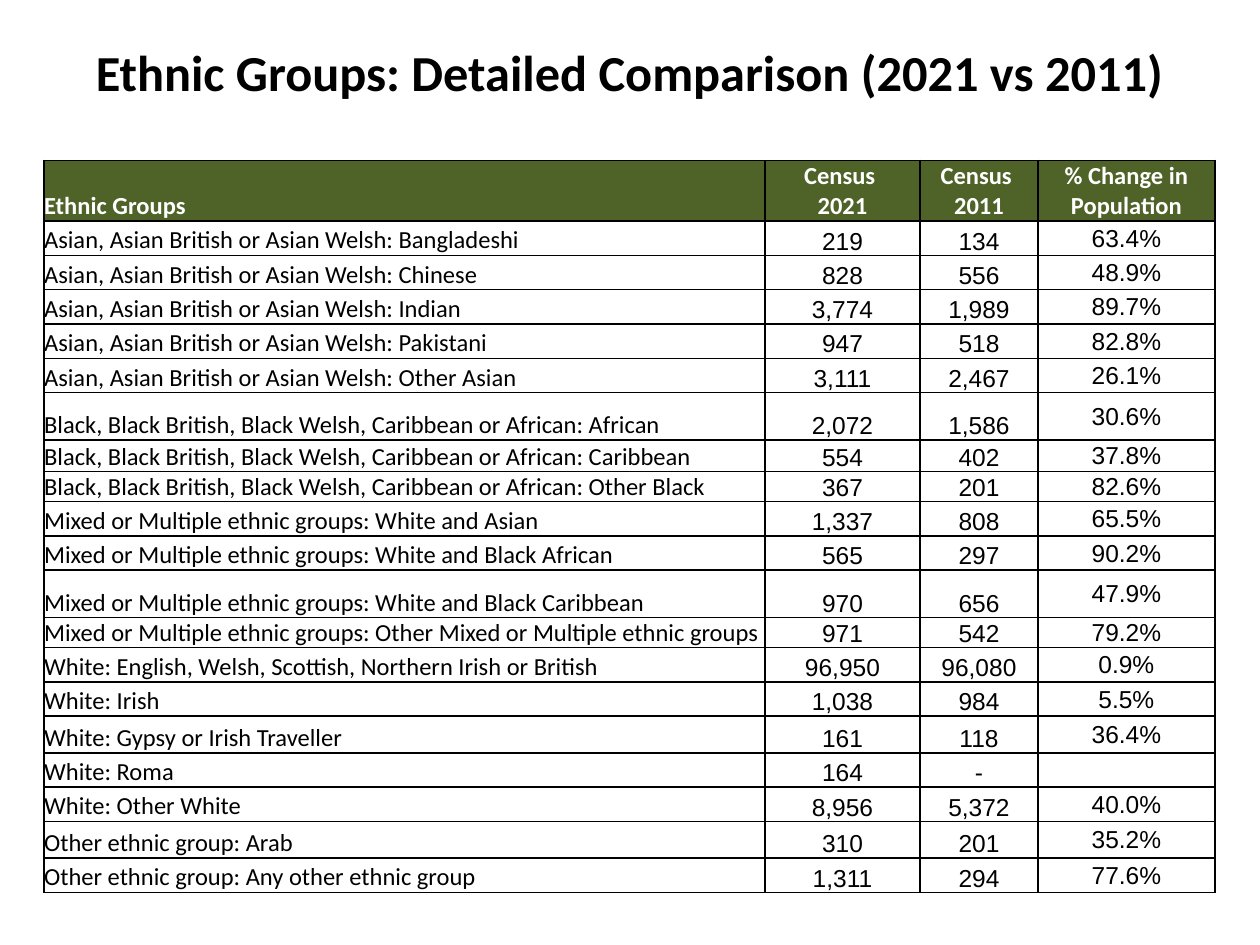
from dataclasses import dataclass

from lxml.etree import SubElement
from pptx import Presentation
from pptx.dml.color import RGBColor
from pptx.enum.text import MSO_ANCHOR as Anchor, PP_ALIGN as Align
from pptx.oxml.ns import qn
from pptx.util import Pt

BLACK, WHITE, GREEN = "000000", "FFFFFF", "4F6228"
COLUMN_WIDTHS = (412, 88.5, 67.5, 101)
HEADER_HEIGHT = 34.8
COMPACT, SNUG, NORMAL, LOOSE, TALL = 17.1, 18, 19.6, 21, 27.2  # row heights
HEADINGS = ("Ethnic Groups", "Census \n2021", "Census \n2011",
            "% Change in Population")


@dataclass(frozen=True)
class CellStyle:
    font: str = "Arial"
    color: str = BLACK
    fill: str = ""
    bold: bool = False
    align: Align = Align.CENTER
    anchor: Anchor = Anchor.BOTTOM
    inset: float = 0.7


@dataclass(frozen=True)
class GroupRow:
    group: str
    census_2021: str
    census_2011: str
    change: str
    height: float = NORMAL

    def texts(self) -> tuple[str, ...]:
        return self.group, self.census_2021, self.census_2011, self.change


ASIAN = "Asian, Asian British or Asian Welsh: "
BLACK_GROUP = "Black, Black British, Black Welsh, Caribbean or African: "
MIXED = "Mixed or Multiple ethnic groups: "
OTHER = "Other ethnic group: "

GROUPS = (
    GroupRow(ASIAN + "Bangladeshi", "219", "134", "63.4%"),
    GroupRow(ASIAN + "Chinese", "828", "556", "48.9%"),
    GroupRow(ASIAN + "Indian", "3,774", "1,989", "89.7%"),
    GroupRow(ASIAN + "Pakistani", "947", "518", "82.8%"),
    GroupRow(ASIAN + "Other Asian", "3,111", "2,467", "26.1%"),
    GroupRow(BLACK_GROUP + "African", "2,072", "1,586", "30.6%", TALL),
    GroupRow(BLACK_GROUP + "Caribbean", "554", "402", "37.8%", SNUG),
    GroupRow(BLACK_GROUP + "Other Black", "367", "201", "82.6%", COMPACT),
    GroupRow(MIXED + "White and Asian", "1,337", "808", "65.5%"),
    GroupRow(MIXED + "White and Black African", "565", "297", "90.2%"),
    GroupRow(MIXED + "White and Black Caribbean", "970", "656", "47.9%", TALL),
    GroupRow(MIXED + "Other Mixed or Multiple ethnic groups",
             "971", "542", "79.2%", COMPACT),
    GroupRow("White: English, Welsh, Scottish, Northern Irish or British",
             "96,950", "96,080", "0.9%"),
    GroupRow("White: Irish", "1,038", "984", "5.5%"),
    GroupRow("White: Gypsy or Irish Traveller", "161", "118", "36.4%", LOOSE),
    GroupRow("White: Roma", "164", "-", ""),
    GroupRow("White: Other White", "8,956", "5,372", "40.0%"),
    GroupRow(OTHER + "Arab", "310", "201", "35.2%", LOOSE),
    GroupRow(OTHER + "Any other ethnic group", "1,311", "294", "77.6%"),
)

HEADER_STYLES = tuple(
    CellStyle("Calibri", WHITE, GREEN, True, align, anchor, 0)
    for align, anchor in ((Align.LEFT, Anchor.BOTTOM),
                          (Align.CENTER, Anchor.BOTTOM),
                          (Align.CENTER, Anchor.MIDDLE),
                          (Align.CENTER, Anchor.BOTTOM)))
BODY_STYLES = (CellStyle("Calibri", align=Align.LEFT, inset=0), CellStyle(),
               CellStyle(), CellStyle(anchor=Anchor.MIDDLE))


def rgb(color: str) -> RGBColor:
    return RGBColor.from_string(color)


def set_font(para, name: str, size: float, color: str, bold: bool) -> None:
    font = para.font
    font.name, font.size, font.bold = name, Pt(size), bold
    font.color.rgb = rgb(color)


def add_borders(cell) -> None:
    properties = cell._tc.get_or_add_tcPr()
    for side in ("lnL", "lnR", "lnT", "lnB"):
        line = SubElement(properties, qn(f"a:{side}"), w=str(Pt(1)))
        fill = SubElement(line, qn("a:solidFill"))
        SubElement(fill, qn("a:srgbClr"), val=BLACK)


def fill_cell(cell, text: str, style: CellStyle) -> None:
    add_borders(cell)
    if style.fill:
        cell.fill.solid()
        cell.fill.fore_color.rgb = rgb(style.fill)
    else:
        cell.fill.background()
    cell.margin_left = cell.margin_right = cell.margin_top = Pt(style.inset)
    cell.margin_bottom = 0
    cell.vertical_anchor = style.anchor
    para = cell.text_frame.paragraphs[0]
    para.text = text
    para.alignment = style.align
    set_font(para, style.font, 14, style.color, style.bold)
    if not text:  # an empty cell takes its line height from the end mark
        SubElement(para._p, qn("a:endParaRPr"), sz="1400")


def add_title(page, text: str) -> None:
    title = page.shapes.title
    title.left, title.top, title.width, title.height = (
        Pt(36), Pt(21.6), Pt(648), Pt(38.2))
    frame = title.text_frame
    frame.word_wrap = True
    frame.vertical_anchor = Anchor.MIDDLE
    para = frame.paragraphs[0]
    para.text = text
    para.alignment = Align.CENTER
    set_font(para, "Calibri", 28.8, BLACK, True)


def add_census_table(page) -> None:
    heights = (HEADER_HEIGHT, *(row.height for row in GROUPS))
    table = page.shapes.add_table(
        len(heights), len(COLUMN_WIDTHS), Pt(25.2), Pt(91.6),
        Pt(sum(COLUMN_WIDTHS)), Pt(sum(heights))).table
    table.horz_banding = False
    for column, width in zip(table.columns, COLUMN_WIDTHS):
        column.width = Pt(width)
    contents = [(HEADINGS, HEADER_STYLES),
                *((row.texts(), BODY_STYLES) for row in GROUPS)]
    for row, height, (texts, styles) in zip(table.rows, heights, contents):
        row.height = Pt(height)
        for cell, text, style in zip(row.cells, texts, styles):
            fill_cell(cell, text, style)


def main() -> None:
    deck = Presentation()
    deck.slide_width, deck.slide_height = Pt(720), Pt(540)
    page = deck.slides.add_slide(deck.slide_layouts[5])  # title only
    add_title(page, "Ethnic Groups: Detailed Comparison (2021 vs 2011)")
    add_census_table(page)
    deck.save("out.pptx")


if __name__ == "__main__":
    main()
